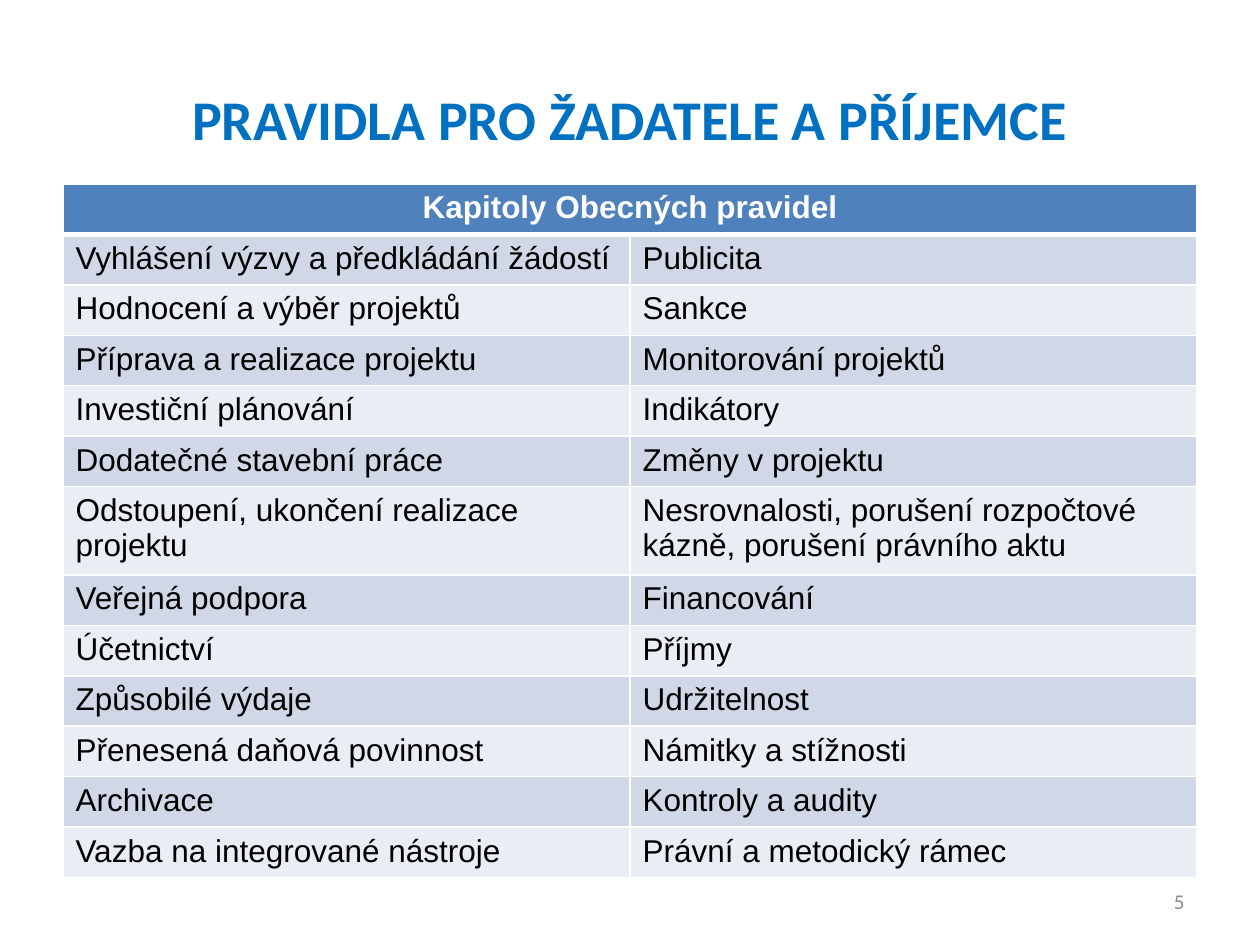
"""Build a slide listing the chapters of the general rules in a two-column table."""
from lxml import etree
from pptx import Presentation
from pptx.dml.color import RGBColor
from pptx.enum import text
from pptx.oxml import ns
from pptx.util import Pt

TITLE = "PRAVIDLA PRO ŽADATELE A PŘÍJEMCE"
HEADER = "Kapitoly Obecných pravidel"
CHAPTERS = [
    ("Vyhlášení výzvy a předkládání žádostí", "Publicita"),
    ("Hodnocení a výběr projektů", "Sankce"),
    ("Příprava a realizace projektu", "Monitorování projektů"),
    ("Investiční plánování", "Indikátory"),
    ("Dodatečné stavební práce", "Změny v projektu"),
    ("Odstoupení, ukončení realizace projektu",
     "Nesrovnalosti, porušení rozpočtové kázně, porušení právního aktu"),
    ("Veřejná podpora", "Financování"),
    ("Účetnictví", "Příjmy"),
    ("Způsobilé výdaje", "Udržitelnost"),
    ("Přenesená daňová povinnost", "Námitky a stížnosti"),
    ("Archivace", "Kontroly a audity"),
    ("Vazba na integrované nástroje", "Právní a metodický rámec"),
]
PAGE = "5"

BLUE = RGBColor(0x00, 0x70, 0xC0)
HEADER_BLUE = RGBColor(0x4F, 0x81, 0xBD)
BANDS = [RGBColor(0xD0, 0xD8, 0xE8), RGBColor(0xE9, 0xED, 0xF4)]
WHITE = RGBColor(0xFF, 0xFF, 0xFF)
BLACK = RGBColor(0x00, 0x00, 0x00)
GREY = RGBColor(0x8C, 0x8C, 0x8C)

LEFT, WIDTH, TABLE_TOP = 36, 648, 105.12
ROW_HEIGHT, TALL_ROW_HEIGHT = 28, 50.4
TALL_ROW = 6


def write(frame, words, font_name, size, color, align, bold=False):
    paragraph = frame.paragraphs[0]
    paragraph.text = words
    paragraph.alignment = align
    font = paragraph.font
    font.name, font.size, font.bold = font_name, Pt(size), bold
    font.color.rgb = color


def add_label(slide, box, *style, **options):
    frame = slide.shapes.add_textbox(*map(Pt, box)).text_frame
    frame.word_wrap = True
    frame.vertical_anchor = text.MSO_ANCHOR.MIDDLE
    write(frame, *style, **options)


def add_borders(cell, bottom=1):
    properties = cell._tc.get_or_add_tcPr()
    for side, width in (("L", 1), ("R", 1), ("T", 1), ("B", bottom)):
        line = etree.SubElement(properties, ns.qn(f"a:ln{side}"), w=str(Pt(width)))
        fill = etree.SubElement(line, ns.qn("a:solidFill"))
        etree.SubElement(fill, ns.qn("a:srgbClr"), val=str(WHITE))


def fill_cell(cell, words, fill, color, align, bold=False, bottom=1):
    add_borders(cell, bottom)
    cell.fill.solid()
    cell.fill.fore_color.rgb = fill
    write(cell.text_frame, words, "Arial", 18, color, align, bold)


def add_chapters(slide):
    heights = [ROW_HEIGHT] * (len(CHAPTERS) + 1)
    heights[TALL_ROW] = TALL_ROW_HEIGHT
    table = slide.shapes.add_table(
        len(heights), 2, Pt(LEFT), Pt(TABLE_TOP), Pt(WIDTH), Pt(sum(heights))).table
    for row, height in zip(table.rows, heights):
        row.height = Pt(height)
    table.cell(0, 0).merge(table.cell(0, 1))
    for column, words in enumerate((HEADER, "")):
        fill_cell(table.cell(0, column), words, HEADER_BLUE, WHITE,
                  text.PP_ALIGN.CENTER, bold=True, bottom=3)
    for row, pair in enumerate(CHAPTERS, 1):
        for column, words in enumerate(pair):
            fill_cell(table.cell(row, column), words, BANDS[(row - 1) % 2],
                      BLACK, text.PP_ALIGN.LEFT)


def main():
    deck = Presentation()
    deck.slide_width, deck.slide_height = Pt(720), Pt(540)
    slide = deck.slides.add_slide(deck.slide_layouts[6])
    add_label(slide, (LEFT, 22.5, WIDTH, 90), TITLE, "Calibri", 32, BLUE,
              text.PP_ALIGN.CENTER, bold=True)
    add_chapters(slide)
    add_label(slide, (516, 500.5, 168, 28.75), PAGE, "Calibri", 12, GREY,
              text.PP_ALIGN.RIGHT)
    deck.save("out.pptx")


if __name__ == "__main__":
    main()
